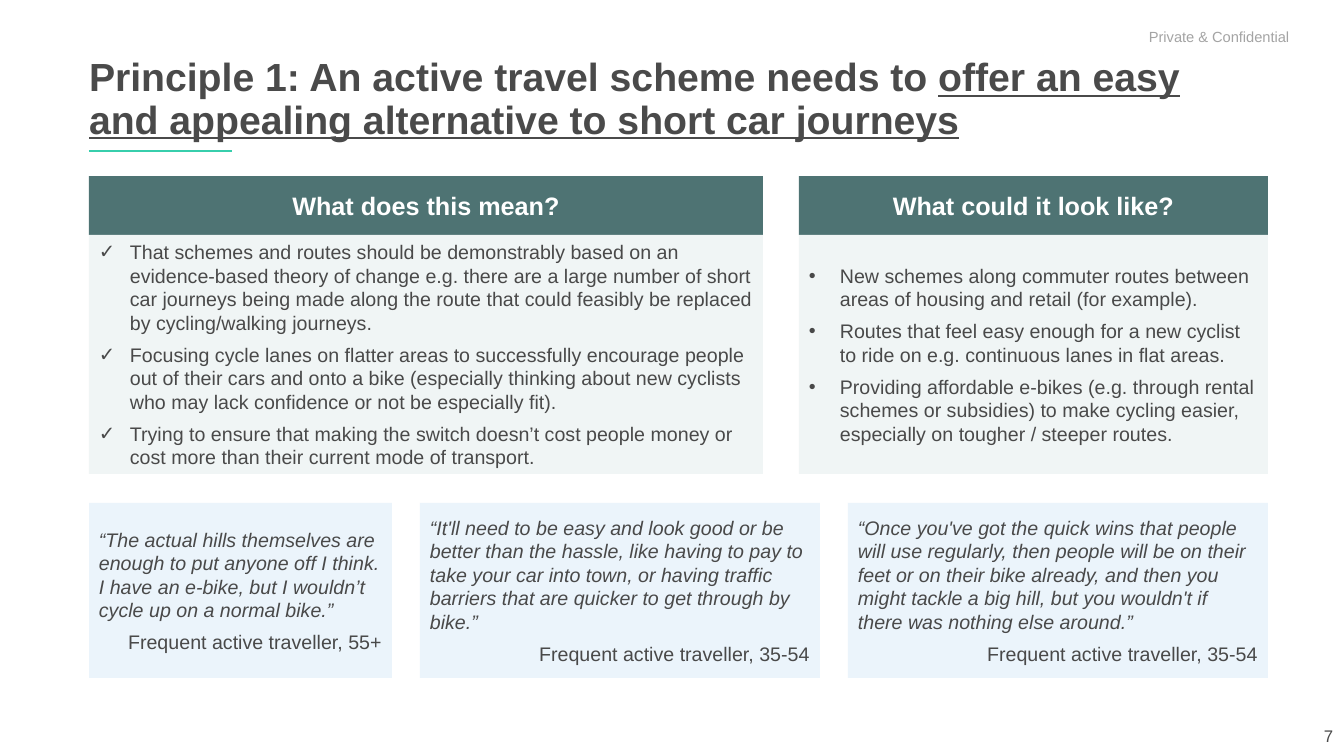
from dataclasses import dataclass

import lxml.etree
import pptx
import pptx.dml.color
import pptx.enum.shapes
import pptx.enum.text
import pptx.oxml.ns
import pptx.util

RGBColor = pptx.dml.color.RGBColor
ALIGN = pptx.enum.text.PP_ALIGN
ANCHOR = pptx.enum.text.MSO_ANCHOR

WHITE = RGBColor(0xFF, 0xFF, 0xFF)
TITLE_GREY = RGBColor(0x4A, 0x4A, 0x4A)
TEXT_GREY = RGBColor(0x49, 0x49, 0x49)
LABEL_GREY = RGBColor(0xA4, 0xA4, 0xA4)
MINT = RGBColor(0x37, 0xCE, 0xAC)
TEAL = RGBColor(0x4E, 0x73, 0x73)
PALE_TEAL = RGBColor(0xF0, 0xF5, 0xF5)
PALE_BLUE = RGBColor(0xEB, 0xF4, 0xFB)

SLIDE_W, SLIDE_H = 1344, 756
SCALE = 12192000 / SLIDE_W
LEFT = 89
HEADER_TOP, HEADER_H, BODY_H = 176, 59, 239
QUOTE_TOP, QUOTE_H, QUOTE_GAP = 503, 175, 28
INDENT = 31

BODY_FONT = {"size": pptx.util.Pt(14)}
HEADER_FONT = {"size": pptx.util.Pt(18), "bold": True}
TITLE_FONT = {"size": pptx.util.Pt(28), "bold": True}


@dataclass
class Panel:
    left: int
    width: int
    heading: str
    bullet: str
    points: list[str]


@dataclass
class Quote:
    width: int
    words: str
    speaker: str


PANELS = [
    Panel(LEFT, 674, "What does this mean?", "✓", [
        "That schemes and routes should be demonstrably based on an evidence-based theory of change "
        "e.g. there are a large number of short car journeys being made along the route that could "
        "feasibly be replaced by cycling/walking journeys.",
        "Focusing cycle lanes on flatter areas to successfully encourage people out of their cars and "
        "onto a bike (especially thinking about new cyclists who may lack confidence or not be "
        "especially fit).",
        "Trying to ensure that making the switch doesn’t cost people money or cost more than their "
        "current mode of transport.",
    ]),
    Panel(799, 469, "What could it look like?", "•", [
        "New schemes along commuter routes between areas of housing and retail (for example).",
        "Routes that feel easy enough for a new cyclist to ride on e.g. continuous lanes in flat areas.",
        "Providing affordable e-bikes (e.g. through rental schemes or subsidies) to make cycling "
        "easier, especially on tougher / steeper routes.",
    ]),
]

QUOTES = [
    Quote(303, "“The actual hills themselves are enough to put anyone off I think. I have an e-bike, "
               "but I wouldn’t cycle up on a normal bike.”", "Frequent active traveller, 55+"),
    Quote(400, "“It'll need to be easy and look good or be better than the hassle, like having to pay "
               "to take your car into town, or having traffic barriers that are quicker to get "
               "through by bike.”", "Frequent active traveller, 35-54"),
    Quote(420, "“Once you've got the quick wins that people will use regularly, then people will be on "
               "their feet or on their bike already, and then you might tackle a big hill, but you "
               "wouldn't if there was nothing else around.”", "Frequent active traveller, 35-54"),
]


def px(n: int) -> int:
    return round(n * SCALE)


def add_box(s, left: int, top: int, width: int, height: int, fill: RGBColor | None = None):
    place = px(left), px(top), px(width), px(height)
    if fill is None:
        sp = s.shapes.add_textbox(*place)
    else:
        sp = s.shapes.add_shape(pptx.enum.shapes.MSO_SHAPE.RECTANGLE, *place)
        sp.shadow.inherit = False
        sp.fill.solid()
        sp.fill.fore_color.rgb = fill
        sp.line.fill.background()
    tf = sp.text_frame
    tf.word_wrap = True
    tf.vertical_anchor = ANCHOR.MIDDLE
    return tf


def add_run(p, text: str, color: RGBColor, font: dict) -> None:
    r = p.add_run()
    r.text = text
    r.font.name = "Arial"
    r.font.color.rgb = color
    for name, value in font.items():
        setattr(r.font, name, value)


def write(tf, text: str, color: RGBColor, font: dict, align=ALIGN.LEFT, after: int = 0):
    p = tf.add_paragraph() if tf.paragraphs[0].runs else tf.paragraphs[0]
    p.alignment = align
    p.space_after = pptx.util.Pt(after)
    add_run(p, text, color, font)
    return p


def add_bullet(p, char: str) -> None:
    pPr = p._p.get_or_add_pPr()
    pPr.set("marL", str(px(INDENT)))
    pPr.set("indent", str(-px(INDENT)))
    qn = pptx.oxml.ns.qn
    lxml.etree.SubElement(pPr, qn("a:buFont"), typeface="Arial")
    lxml.etree.SubElement(pPr, qn("a:buChar"), char=char)


def add_panel(s, panel: Panel) -> None:
    tf = add_box(s, panel.left, HEADER_TOP, panel.width, HEADER_H, TEAL)
    write(tf, panel.heading, WHITE, HEADER_FONT, ALIGN.CENTER)
    tf = add_box(s, panel.left, HEADER_TOP + HEADER_H, panel.width, BODY_H, PALE_TEAL)
    for point in panel.points:
        add_bullet(write(tf, point, TEXT_GREY, BODY_FONT, after=6), panel.bullet)


def add_quote(s, left: int, quote: Quote) -> None:
    tf = add_box(s, left, QUOTE_TOP, quote.width, QUOTE_H, PALE_BLUE)
    write(tf, quote.words, TEXT_GREY, BODY_FONT | {"italic": True}, after=6)
    write(tf, quote.speaker, TEXT_GREY, BODY_FONT, ALIGN.RIGHT)


def add_title(s) -> None:
    tf = add_box(s, LEFT, 53, 1179, 88)
    tf.vertical_anchor = ANCHOR.TOP
    tf.margin_left = 0
    p = write(tf, "Principle 1: An active travel scheme needs to ", TITLE_GREY, TITLE_FONT)
    p.line_spacing = 0.9
    add_run(p, "offer an easy and appealing alternative to short car journeys",
            TITLE_GREY, TITLE_FONT | {"underline": True})


def add_rule(s) -> None:
    line = s.shapes.add_connector(pptx.enum.shapes.MSO_CONNECTOR.STRAIGHT,
                                  px(LEFT), px(151), px(232), px(151))
    line.line.color.rgb = MINT
    line.line.width = pptx.util.Pt(1)
    lxml.etree.SubElement(line._element.spPr, pptx.oxml.ns.qn("a:effectLst"))


def main() -> None:
    prs = pptx.Presentation()
    prs.slide_width, prs.slide_height = px(SLIDE_W), px(SLIDE_H)
    s = prs.slides.add_slide(prs.slide_layouts[6])
    write(add_box(s, 1041, 716, 302, 40), "7", TITLE_GREY, {"size": pptx.util.Pt(12)}, ALIGN.RIGHT)
    write(add_box(s, 1139, 19, 164, 35, WHITE), "Private & Confidential", LABEL_GREY,
          {"size": pptx.util.Pt(10.5)})
    add_rule(s)
    add_title(s)
    for panel in PANELS:
        add_panel(s, panel)
    left = LEFT
    for quote in QUOTES:
        add_quote(s, left, quote)
        left += quote.width + QUOTE_GAP
    prs.save("out.pptx")


if __name__ == "__main__":
    main()
